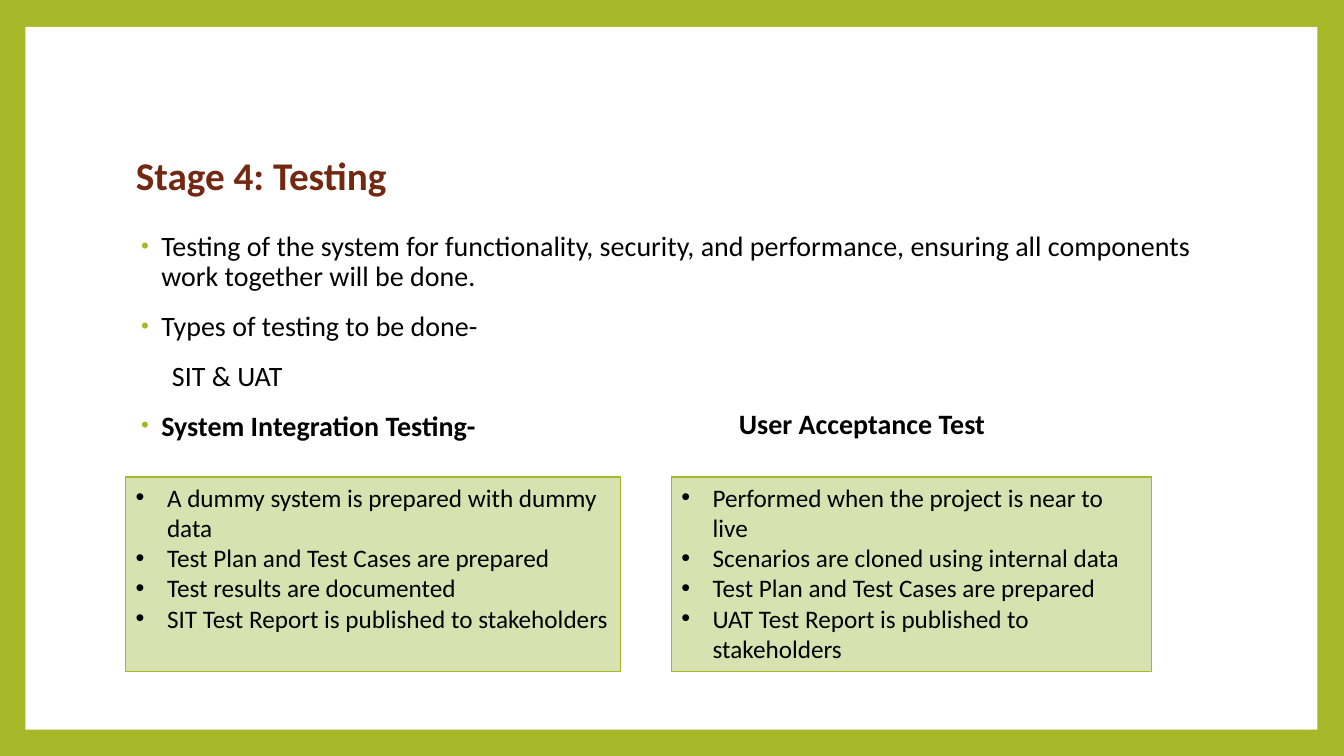
from dataclasses import dataclass

from lxml import etree
from pptx import Presentation
from pptx import util as u
from pptx.dml.color import RGBColor
from pptx.enum import shapes, text
from pptx.oxml import ns

FONT = "Calibri"
GREEN, PALE, WHITE = "A6B727", "D8E1B0", "FFFFFF"
BROWN, BLACK = "722811", "000000"


@dataclass
class Line:
    words: str
    bold: bool = False
    left: float = 0.64
    hang: float = 0.51
    dot: bool = True


@dataclass
class Card:
    left: float
    width: float
    items: list[str]


BODY = [
    Line("Testing of the system for functionality, security, and performance, "
         "ensuring all components work together will be done."),
    Line("Types of testing to be done-"),
    Line("SIT & UAT", left=0.91, hang=0, dot=False),
    Line("System Integration Testing-", bold=True),
]

CARDS = [
    Card(3.17, 12.46, [
        "A dummy system is prepared with dummy data",
        "Test Plan and Test Cases are prepared",
        "Test results are documented",
        "SIT Test Report is published to stakeholders",
    ]),
    Card(16.92, 12.09, [
        "Performed when the project is near to live",
        "Scenarios are cloned using internal data",
        "Test Plan and Test Cases are prepared",
        "UAT Test Report is published to stakeholders",
    ]),
]


def paint(target, tone: str) -> None:
    """Give a fill one solid colour."""
    target.solid()
    target.fore_color.rgb = RGBColor.from_string(tone)


def place(shape, left: float, top: float, width: float, height: float) -> None:
    shape.left, shape.top = u.Cm(left), u.Cm(top)
    shape.width, shape.height = u.Cm(width), u.Cm(height)


def write(para, words: str, size: float, tone: str = BLACK,
          bold: bool = False) -> None:
    run = para.add_run()
    run.text = words
    run.font.name, run.font.size, run.font.bold = FONT, u.Pt(size), bold
    paint(run.font.fill, tone)


def frame(shape, anchor):
    """Prepare a wrapped text frame of fixed size."""
    box = shape.text_frame
    box.word_wrap = True
    box.auto_size = text.MSO_AUTO_SIZE.NONE
    box.vertical_anchor = anchor
    return box


def bullet(para, left: float, hang: float, dot: bool = True,
           tone: str = BLACK, scale: int = 100) -> None:
    """Set the hanging indent and the bullet; call after spacing."""
    props = para._p.get_or_add_pPr()
    props.set("marL", str(u.Cm(left)))
    props.set("indent", str(-u.Cm(hang)))

    def add(parent, tag: str, **attrs: str):
        return etree.SubElement(parent, ns.qn(tag), **attrs)

    if not dot:
        add(props, "a:buNone")
        return
    add(add(props, "a:buClr"), "a:srgbClr", val=tone)
    add(props, "a:buSzPct", val=str(scale * 1000))
    add(props, "a:buFont", typeface="Arial")
    add(props, "a:buChar", char="•")


def block(slide, left: float, top: float, width: float, height: float,
          tone: str):
    """Draw a plain filled rectangle."""
    shape = slide.shapes.add_shape(
        shapes.MSO_SHAPE.RECTANGLE,
        u.Cm(left), u.Cm(top), u.Cm(width), u.Cm(height))
    shape.shadow.inherit = False
    paint(shape.fill, tone)
    shape.line.fill.background()
    return shape


def draw(slide, card: Card) -> None:
    shape = block(slide, card.left, 12.02, card.width, 4.91, PALE)
    paint(shape.line.fill, GREEN)
    shape.line.width = u.Pt(0.79)
    box = frame(shape, text.MSO_ANCHOR.TOP)
    for i, item in enumerate(card.items):
        para = box.add_paragraph() if i else box.paragraphs[0]
        para.alignment = text.PP_ALIGN.LEFT
        bullet(para, 0.79, 0.79)
        write(para, item, 18)


def main() -> None:
    deck = Presentation()
    deck.slide_width, deck.slide_height = u.Cm(33.87), u.Cm(19.05)
    slide = deck.slides.add_slide(deck.slide_layouts[1])
    title, body = slide.placeholders

    # Green border around a white panel
    paint(slide.background.fill, GREEN)
    panel = block(slide, 0.64, 0.68, 32.56, 17.71, WHITE)
    title.element.addprevious(panel.element)

    # Title
    place(title, 3.17, 3.51, 27.43, 1.96)
    para = frame(title, text.MSO_ANCHOR.MIDDLE).paragraphs[0]
    para.alignment = text.PP_ALIGN.LEFT
    para.line_spacing = 0.9
    write(para, "Stage 4: Testing", 28, BROWN, True)

    # Body list
    place(body, 3.17, 5.72, 27.43, 11.23)
    box = frame(body, text.MSO_ANCHOR.TOP)
    for i, line in enumerate(BODY):
        para = box.add_paragraph() if i else box.paragraphs[0]
        para.line_spacing = 0.9
        para.space_before = u.Pt(14)
        bullet(para, line.left, line.hang, line.dot, GREEN, 80)
        write(para, line.words, 20, bold=line.bold)

    # Heading of the right column
    head = slide.shapes.add_textbox(
        u.Cm(18.37), u.Cm(10.13), u.Cm(10), u.Cm(1.12))
    para = frame(head, text.MSO_ANCHOR.TOP).paragraphs[0]
    write(para, "User Acceptance Test", 20, bold=True)

    # Cards
    for card in CARDS:
        draw(slide, card)

    deck.save("out.pptx")


if __name__ == "__main__":
    main()
